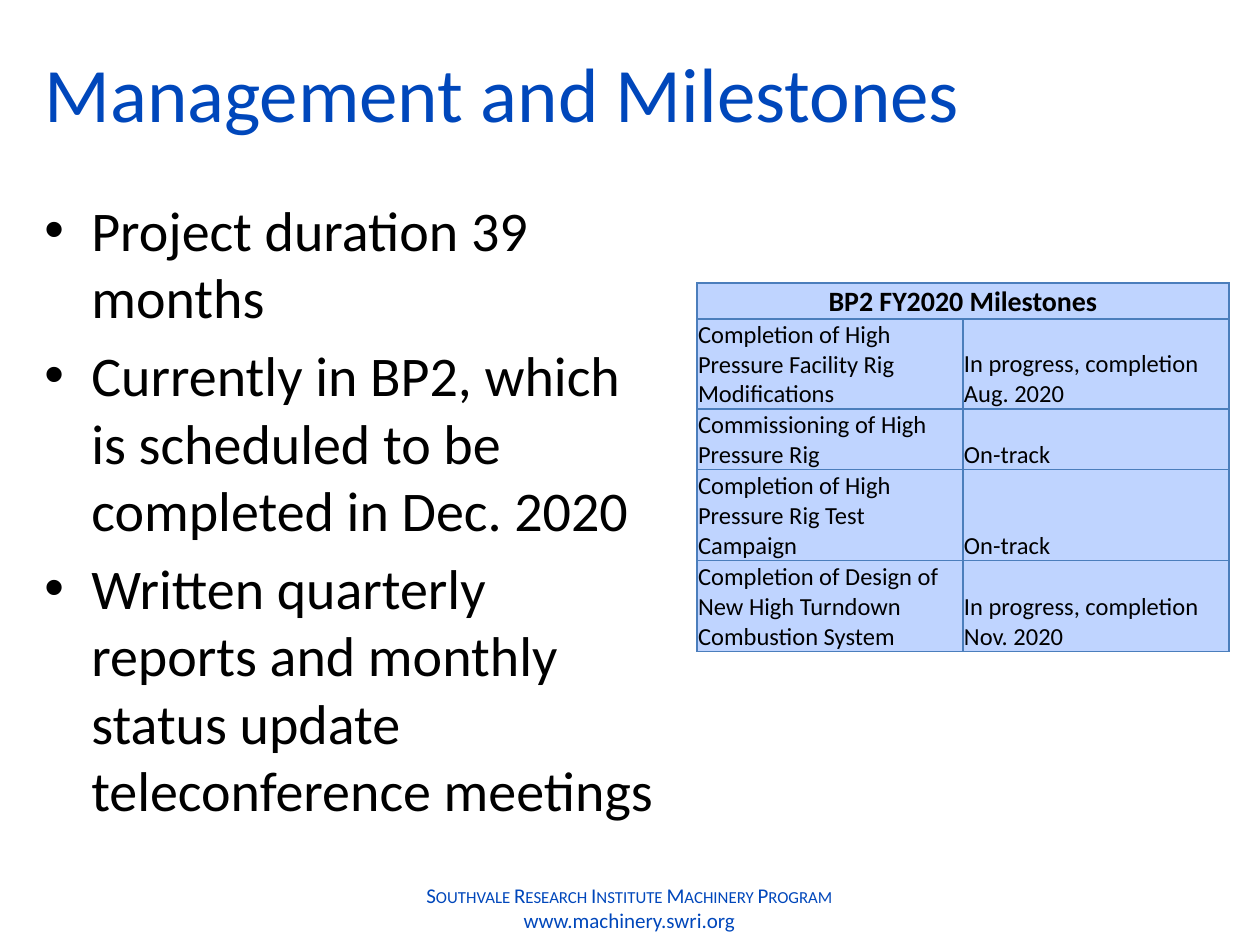
from lxml import etree
from pptx import Presentation
from pptx.dml.color import RGBColor
from pptx.enum.text import MSO_ANCHOR, PP_ALIGN
from pptx.oxml.ns import qn
from pptx.util import Pt

PX = 914400 / 126
FONT = "Calibri"
BLUE = RGBColor(0x00, 0x47, 0xBB)
BLACK = RGBColor(0x00, 0x00, 0x00)
CELL_BLUE = RGBColor(0xBF, 0xD4, 0xFF)
BORDER = RGBColor(0x4B, 0x7E, 0xBC)
CENTER, LEFT = PP_ALIGN.CENTER, PP_ALIGN.LEFT
TOP, MIDDLE, BOTTOM = MSO_ANCHOR.TOP, MSO_ANCHOR.MIDDLE, MSO_ANCHOR.BOTTOM


def px(n):
    return round(n * PX)


def add_run(p, text, size, color, bold=False):
    r = p.add_run()
    r.text = text
    r.font.name, r.font.size, r.font.bold = FONT, Pt(size), bold
    r.font.color.rgb = color
    return r


prs = Presentation()
prs.slide_width, prs.slide_height = px(1260), px(945)
s = prs.slides.add_slide(prs.slide_layouts[6])

# Footer
tf = s.shapes.add_textbox(px(383), px(876), px(493), px(63)).text_frame
tf.word_wrap = False
p = tf.paragraphs[0]
p.alignment = CENTER
r = add_run(p, "Southvale Research Institute Machinery Program", 12, BLUE)
r.font._element.set("cap", "small")
p = tf.add_paragraph()
p.alignment = CENTER
add_run(p, "www.machinery.swri.org", 12, BLUE)

# Title
tf = s.shapes.add_textbox(px(32), px(13), px(1197), px(158)).text_frame
tf.word_wrap = True
tf.vertical_anchor = MIDDLE
add_run(tf.paragraphs[0], "Management and Milestones", 44, BLUE)

# Bullets
bullets = [
    "Project duration 39 months",
    "Currently in BP2, which is scheduled to be completed in Dec. 2020",
    "Written quarterly reports and monthly status update teleconference meetings",
]
tf = s.shapes.add_textbox(px(32), px(189), px(640), px(680)).text_frame
tf.word_wrap = True
tf.vertical_anchor = TOP
for i, text in enumerate(bullets):
    p = tf.add_paragraph() if i else tf.paragraphs[0]
    pPr = p._p.get_or_add_pPr()
    pPr.set("marL", str(px(47)))
    pPr.set("indent", str(-px(47)))
    etree.SubElement(pPr, qn("a:buFont"), typeface="Arial")
    etree.SubElement(pPr, qn("a:buChar"), char="•")
    if i:
        p.space_before = Pt(6.4)
    add_run(p, text, 32, BLACK)

# Milestone table
milestones = [
    ("BP2 FY2020 Milestones", ""),
    ("Completion of High Pressure Facility Rig Modifications", "In progress, completion Aug. 2020"),
    ("Commissioning of High Pressure Rig", "On-track"),
    ("Completion of High Pressure Rig Test Campaign", "On-track"),
    ("Completion of Design of New High Turndown Combustion System", "In progress, completion Nov. 2020"),
]
row_heights = [36, 90, 61, 91, 91]
table = s.shapes.add_table(len(milestones), 2, px(697), px(283), px(532),
                           px(sum(row_heights))).table
for col in table.columns:
    col.width = px(266)
for i, (row, height) in enumerate(zip(milestones, row_heights)):
    table.rows[i].height = px(height)
    header = i == 0
    for j, text in enumerate(row):
        cell = table.cell(i, j)
        cell.margin_left = cell.margin_right = cell.margin_top = px(1)
        cell.margin_bottom = 0
        cell.vertical_anchor = BOTTOM if header or j else MIDDLE
        tcPr = cell._tc.get_or_add_tcPr()
        for side in ("lnL", "lnR", "lnT", "lnB"):
            ln = etree.SubElement(tcPr, qn(f"a:{side}"), w=str(Pt(0.75)))
            fill = etree.SubElement(ln, qn("a:solidFill"))
            etree.SubElement(fill, qn("a:srgbClr"), val=str(BORDER))
        cell.fill.solid()
        cell.fill.fore_color.rgb = CELL_BLUE
        if text:
            p = cell.text_frame.paragraphs[0]
            p.alignment = CENTER if header else LEFT
            add_run(p, text, 16 if header else 14, BLACK, header)
table.cell(0, 0).merge(table.cell(0, 1))

prs.save("out.pptx")
